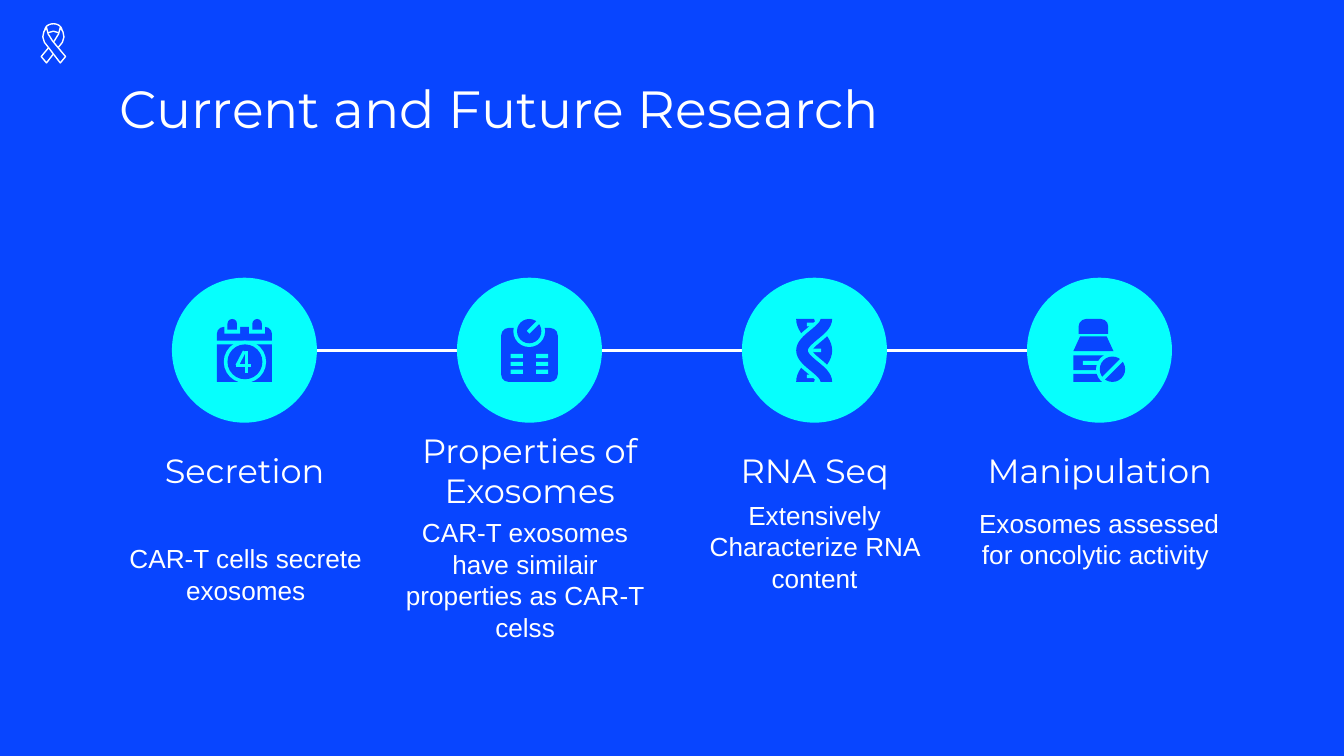
"""Build the "Current and Future Research" slide with four linked research steps."""
from itertools import pairwise, product
from math import cos, hypot, pi, sin

from lxml import etree
from pptx import Presentation
from pptx import util as u
from pptx.dml.color import RGBColor
from pptx.enum import shapes, text
from pptx.oxml.ns import qn

BLUE, CYAN, WHITE = "0845FF", "06FFFD", "FFFFFF"
OVAL = shapes.MSO_SHAPE.OVAL
RECT = shapes.MSO_SHAPE.RECTANGLE
ROUNDED = shapes.MSO_SHAPE.ROUNDED_RECTANGLE
ROUND_TOP = shapes.MSO_SHAPE.ROUND_2_SAME_RECTANGLE
TRAPEZOID = shapes.MSO_SHAPE.TRAPEZOID

DISC, DISC_TOP, FIRST_DISC, LAST_DISC = 2.74, 5.25, 3.25, 19.41
LABEL_WIDTH, FIRST_LABEL = 5.23, 2.01
ICON_HEIGHT = 1.19


def color(value):
    return RGBColor.from_string(value)


class Deck:
    def __init__(self):
        self.show = Presentation()
        self.show.slide_width, self.show.slide_height = u.Cm(25.4), u.Cm(14.29)
        self.slide = self.show.slides.add_slide(self.show.slide_layouts[6])
        self.slide.background.fill.solid()
        self.slide.background.fill.fore_color.rgb = color(BLUE)
        self.origin = (0, 0)

    def place(self, x, y):
        return u.Cm(self.origin[0] + x), u.Cm(self.origin[1] + y)

    def label(self, wording, left, top, width, height, size,
              font="Montserrat", align=text.PP_ALIGN.CENTER):
        box = self.slide.shapes.add_textbox(
            *self.place(left, top), u.Cm(width), u.Cm(height))
        frame = box.text_frame
        frame.word_wrap = True
        frame.vertical_anchor = text.MSO_ANCHOR.MIDDLE
        frame.margin_left = frame.margin_right = u.Cm(0.25)
        frame.margin_top = frame.margin_bottom = u.Cm(0.25)
        paragraph = frame.paragraphs[0]
        paragraph.text, paragraph.alignment = wording, align
        paragraph.font.name, paragraph.font.size = font, u.Pt(size)
        paragraph.font.color.rgb = color(WHITE)

    def paint(self, part, fill, edge=None):
        part.shadow.inherit = False
        part.fill.solid()
        part.fill.fore_color.rgb = color(fill)
        if edge:
            part.line.color.rgb, part.line.width = color(edge), u.Pt(0.75)
        else:
            part.line.fill.background()

    def preset(self, kind, left, top, width, height, fill, *adjustments):
        part = self.slide.shapes.add_shape(
            kind, *self.place(left, top), u.Cm(width), u.Cm(height))
        for i, value in enumerate(adjustments):
            part.adjustments[i] = value
        self.paint(part, fill)

    def circle(self, center_x, center_y, radius, fill):
        self.preset(OVAL, center_x - radius, center_y - radius,
                    2 * radius, 2 * radius, fill)

    def polygon(self, points, fill, edge=None):
        start, *rest = [self.place(x, y) for x, y in points]
        builder = self.slide.shapes.build_freeform(*start)
        builder.add_line_segments(rest, close=True)
        self.paint(builder.convert_to_shape(), fill, edge)

    def line(self, start, end, stroke, weight):
        link = self.slide.shapes.add_connector(
            shapes.MSO_CONNECTOR.STRAIGHT, *self.place(*start), *self.place(*end))
        link.line.color.rgb, link.line.width = color(stroke), u.Pt(weight)
        etree.SubElement(link.element.spPr, qn("a:effectLst"))


def draw_calendar(deck):
    center_x, center_y = 0.53, 0.81
    deck.preset(ROUND_TOP, 0, 0.15, 1.04, 0.26, BLUE, 0.5)
    deck.preset(RECT, 0, 0.48, 1.04, 0.71, BLUE)
    for ring_left in (0.2, 0.67):
        deck.preset(RECT, ring_left - 0.06, 0.13, 0.3, 0.15, CYAN)
        deck.preset(ROUND_TOP, ring_left, 0, 0.18, 0.2, BLUE, 0.5)
    deck.circle(center_x, center_y, 0.4, CYAN)
    deck.circle(center_x, center_y, 0.33, BLUE)
    deck.line((0.52, 0.61), (0.38, 0.88), CYAN, 1.75)
    deck.line((0.36, 0.88), (0.64, 0.88), CYAN, 2)
    deck.line((0.56, 0.6), (0.56, 1.02), CYAN, 2)


def draw_scale(deck):
    center_x, center_y = 0.53, 0.23
    deck.preset(ROUNDED, 0, 0.17, 1.07, 1.02, BLUE, 0.14)
    deck.circle(center_x, center_y, 0.3, CYAN)
    deck.circle(center_x, center_y, 0.23, BLUE)
    deck.line((0.51, 0.25), (0.7, 0.06), CYAN, 2)
    for row, slot_left in product(range(3), (0.18, 0.66)):
        deck.preset(RECT, slot_left, 0.66 + 0.15 * row, 0.23, 0.08, CYAN)


def strand(swing, half_width, steps=32):
    left_edge, right_edge = [], []
    for i in range(steps + 1):
        angle = 2 * pi * i / steps
        x, y = 0.34 + swing * cos(angle), ICON_HEIGHT * i / steps
        slope = -swing * 2 * pi / ICON_HEIGHT * sin(angle)
        across = half_width / hypot(1, slope)
        left_edge.append((x - across, y + across * slope))
        right_edge.append((x + across, y - across * slope))
    return left_edge + right_edge[::-1]


def draw_dna(deck):
    deck.polygon(strand(-0.17, 0.17), BLUE)
    for rung_left, rung_top in ((0.2, 0.07), (0.33, 0.56), (0.2, 1.05)):
        deck.preset(RECT, rung_left, rung_top, 0.14, 0.07, CYAN)
    deck.polygon(strand(0.23, 0.18), CYAN)
    deck.polygon(strand(0.23, 0.11), BLUE)


def draw_bottle(deck):
    tablet_x, tablet_y, score = 0.74, 0.95, 0.2
    deck.preset(ROUND_TOP, 0.1, 0, 0.56, 0.28, BLUE, 0.5)
    deck.preset(TRAPEZOID, 0, 0.33, 0.76, 0.28, BLUE, 0.46)
    deck.preset(RECT, 0, 0.69, 0.61, 0.28, BLUE)
    deck.preset(RECT, 0.18, 0.79, 0.3, 0.08, CYAN)
    deck.preset(RECT, 0, 1.04, 0.56, 0.15, BLUE)
    deck.circle(tablet_x, tablet_y, 0.31, CYAN)
    deck.circle(tablet_x, tablet_y, 0.24, BLUE)
    deck.line((tablet_x - score, tablet_y + score),
              (tablet_x + score, tablet_y - score), CYAN, 2)


def draw_ribbon(deck):
    center_x = 0.25
    loop = [(0.16 * cos(pi * i / 12), 0.13 - 0.12 * sin(pi * i / 12)) for i in range(13)]
    band = [(0.13, 0.08), (0.18, 0.16), (0.2, 0.26), (0.17, 0.36), (0.1, 0.45),
            (-0.13, 0.75), (-0.23, 0.63), (0.02, 0.33), (0.1, 0.2)]
    deck.polygon([(center_x + x, y) for x, y in
                  loop + [(-0.1, 0.18), (0, 0.15), (0.1, 0.18)]], BLUE, WHITE)
    for side in (1, -1):
        deck.polygon([(center_x + side * x, y) for x, y in band], BLUE, WHITE)


STEPS = [
    ("Secretion", "CAR-T cells secrete exosomes", 2.03, 10.18, draw_calendar, 1.04),
    ("Properties of Exosomes", "CAR-T exosomes have similair properties as CAR-T celss",
     7.31, 10.28, draw_scale, 1.07),
    ("RNA Seq", "Extensively Characterize RNA content", 12.78, 9.65, draw_dna, 0.69),
    ("Manipulation", "Exosomes assessed for oncolytic activity ",
     18.16, 9.5, draw_bottle, 0.99),
]


def main():
    deck = Deck()
    deck.label("Current and Future Research", 2.01, 1.24, 21.41, 1.6, 28,
               align=text.PP_ALIGN.LEFT)
    gap = (LAST_DISC - FIRST_DISC) / (len(STEPS) - 1)
    disc_lefts = [FIRST_DISC + i * gap for i in range(len(STEPS))]
    middle = DISC_TOP + DISC / 2
    for left, following in pairwise(disc_lefts):
        deck.line((left + DISC, middle), (following, middle), WHITE, 1.5)
    for i, (heading, detail, detail_left, detail_top, draw_icon, width) in enumerate(STEPS):
        deck.label(heading, FIRST_LABEL + i * gap, 8.49, LABEL_WIDTH, 0.79, 18)
        deck.label(detail, detail_left, detail_top, LABEL_WIDTH, 1.35, 14, "Arial")
        deck.preset(OVAL, disc_lefts[i], DISC_TOP, DISC, DISC, CYAN)
        deck.origin = (disc_lefts[i] + (DISC - width) / 2, 6.03)
        draw_icon(deck)
        deck.origin = (0, 0)
    deck.origin = (0.76, 0.44)
    draw_ribbon(deck)
    deck.show.save("out.pptx")


if __name__ == "__main__":
    main()
